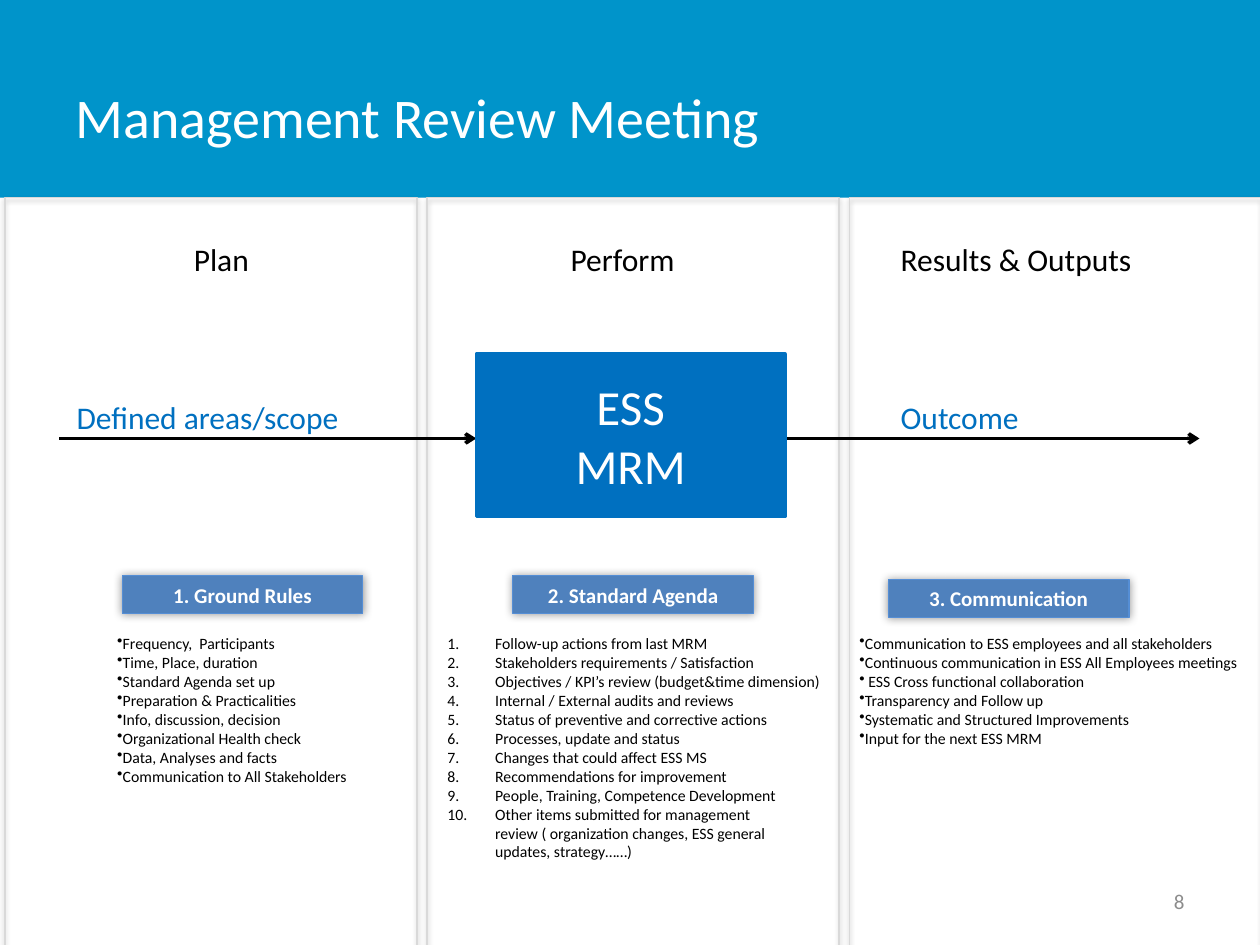
import pptx
import pptx.util
from lxml import etree
from pptx.dml.color import RGBColor
from pptx.enum.shapes import MSO_CONNECTOR, MSO_SHAPE
from pptx.enum.text import MSO_ANCHOR, MSO_AUTO_SIZE, PP_ALIGN
from pptx.oxml.ns import qn
from pptx.util import Inches, Pt

BAND_BLUE = RGBColor(0x00, 0x94, 0xCA)
PROCESS_BLUE = RGBColor(0x00, 0x70, 0xC0)
BADGE_BLUE = RGBColor(0x4F, 0x81, 0xBD)
BADGE_EDGE = RGBColor(0x55, 0x8E, 0xD5)
PANEL_EDGE = RGBColor(0xD9, 0xD9, 0xD9)
NUMBER_GREY = RGBColor(0x8C, 0x8C, 0x8C)
BLACK = RGBColor(0x00, 0x00, 0x00)
WHITE = RGBColor(0xFF, 0xFF, 0xFF)

TITLE = "Management Review Meeting"
PAGE_NUMBER = "8"
PROCESS = ["ESS", "MRM"]
HEADINGS = [  # text, left, width
    ("Plan", 1.44, 0.64),
    ("Perform", 4.43, 1.05),
    ("Results & Outputs", 7.05, 2.06),
]
FLOW_LABELS = [("Defined areas/scope", 0.51, 3.46), ("Outcome", 7.05, 1.53)]
ARROW_STARTS = [0.47, 6.21]
BADGES = [  # text, left, top
    ("1. Ground Rules", 0.97, 4.57),
    ("2. Standard Agenda", 4.07, 4.57),
    ("3. Communication", 7.05, 4.6),
]
GROUND_RULES = [
    "Frequency,  Participants",
    "Time, Place, duration",
    "Standard Agenda set up",
    "Preparation & Practicalities",
    "Info, discussion, decision",
    "Organizational Health check",
    "Data, Analyses and facts",
    "Communication to All Stakeholders",
]
AGENDA = [
    "Follow-up actions from last MRM",
    "Stakeholders requirements / Satisfaction",
    "Objectives / KPI’s review (budget&time dimension)",
    "Internal / External audits and reviews",
    "Status of preventive and corrective actions",
    "Processes, update and status",
    "Changes that could affect ESS MS",
    "Recommendations for improvement",
    "People, Training, Competence Development",
    "Other items submitted for management",
]
AGENDA_CONTINUED = [
    "review ( organization changes, ESS general",
    "updates, strategy……)",
]
COMMUNICATION = [
    "Communication to ESS employees and all stakeholders",
    "Continuous communication in ESS All Employees meetings",
    " ESS Cross functional collaboration",
    "Transparency and Follow up",
    "Systematic and Structured Improvements",
    "Input for the next ESS MRM",
]
BULLET = ("a:buChar", {"char": "•"})
NUMBER = ("a:buAutoNum", {"type": "arabicPeriod"})
NO_MARKER = ("a:buNone", {})
LISTS = [  # left, width, height, hanging indent, [(marker, items)]
    (0.83, 2.44, 1.31, 0, [(BULLET, GROUND_RULES)]),
    (3.45, 3.21, 1.92, 0.38, [(NUMBER, AGENDA), (NO_MARKER, AGENDA_CONTINUED)]),
    (6.72, 3.56, 1.16, 0, [(BULLET, COMMUNICATION)]),
]
LIST_TOP = 4.98
PANEL_LEFT, PANEL_PITCH, PANEL_WIDTH = 0.04, 3.35, 3.27
BAND_HEIGHT = 1.57
ARROW_Y, ARROW_LENGTH = 3.48, 3.31


def write(frame, lines, size, color, align=PP_ALIGN.LEFT, bold=False):
    frame.text = "\n".join(lines)
    font_format = {"name": "Calibri", "size": Pt(size), "bold": bold}
    for paragraph in frame.paragraphs:
        paragraph.alignment = align
        paragraph.space_before = Pt(0)
        for run in paragraph.runs:
            for key, value in font_format.items():
                setattr(run.font, key, value)
            run.font.color.rgb = color


def place(shape, left, top, width, height):
    box = {"left": left, "top": top, "width": width, "height": height}
    for key, value in box.items():
        setattr(shape, key, Inches(value))


def add_label(slide, text, box, size, color, wrap=True, align=PP_ALIGN.LEFT):
    frame = slide.shapes.add_textbox(*map(Inches, box)).text_frame
    frame.word_wrap = wrap
    write(frame, [text], size, color, align)
    return frame


def add_rect(slide, box, fill=None, edge=None, edge_width=0.75):
    rect = slide.shapes.add_shape(MSO_SHAPE.RECTANGLE, *map(Inches, box))
    rect.shadow.inherit = False
    if fill is None:
        rect.fill.background()
    else:
        rect.fill.solid()
        rect.fill.fore_color.rgb = fill
    if edge is None:
        rect.line.fill.background()
    else:
        rect.line.color.rgb = edge
        rect.line.width = Pt(edge_width)
    return rect


def add_shadow(shape, opacity, blur, distance, angle):
    """Opacity in percent, blur and distance in points, angle in degrees."""
    effects = shape.element.spPr.find(qn("a:effectLst"))
    shadow = etree.SubElement(
        effects, qn("a:outerShdw"), blurRad=str(Pt(blur)), dist=str(Pt(distance)),
        dir=str(angle * 60000), algn="ctr", rotWithShape="0")
    color = etree.SubElement(shadow, qn("a:srgbClr"), val=str(BLACK))
    etree.SubElement(color, qn("a:alpha"), val=str(opacity * 1000))


def add_arrow(slide, start):
    ends = (start, ARROW_Y, start + ARROW_LENGTH, ARROW_Y)
    arrow = slide.shapes.add_connector(MSO_CONNECTOR.STRAIGHT, *map(Inches, ends))
    arrow.line.color.rgb = BLACK
    arrow.line.width = Pt(2)
    etree.SubElement(arrow.line._get_or_add_ln(), qn("a:tailEnd"), type="arrow")
    etree.SubElement(arrow.element.spPr, qn("a:effectLst"))


def fill_list(body, left, width, height, hanging, groups):
    place(body, left, LIST_TOP, width, height)
    entries = [(marker, item) for marker, items in groups for item in items]
    frame = body.text_frame
    frame.word_wrap = True
    frame.auto_size = MSO_AUTO_SIZE.NONE
    frame.vertical_anchor = MSO_ANCHOR.TOP
    write(frame, [item for _, item in entries], 9, BLACK)
    for paragraph, (marker, _) in zip(frame.paragraphs, entries):
        tag, attributes = marker
        first_line = 0 if marker is NO_MARKER else -hanging
        properties = paragraph._p.get_or_add_pPr()
        properties.set("marL", str(Inches(hanging)))
        properties.set("indent", str(Inches(first_line)))
        etree.SubElement(properties, qn("a:buFontTx"))
        etree.SubElement(properties, qn(tag), attributes)


def main():
    deck = pptx.Presentation()
    deck.slide_width, deck.slide_height = Inches(10), Inches(7.5)
    slide = deck.slides.add_slide(deck.slide_layouts.get_by_name("Comparison"))
    title, *bodies = slide.placeholders

    backdrop = [add_rect(slide, (0, 0, 10, BAND_HEIGHT), BAND_BLUE)]
    for column in range(3):
        left = PANEL_LEFT + column * PANEL_PITCH
        panel = add_rect(slide, (left, BAND_HEIGHT, PANEL_WIDTH, 5.95), edge=PANEL_EDGE)
        add_shadow(panel, 35, 3.1, 1.8, 90)
        backdrop.append(panel)
    for depth, shape in enumerate(backdrop, start=2):
        slide.shapes.element.insert(depth, shape.element)

    place(title, 0.5, 0.3, 7.81, 1.25)
    title.text_frame.vertical_anchor = MSO_ANCHOR.MIDDLE
    write(title.text_frame, [TITLE], 32, WHITE)

    for body, content in zip(bodies, LISTS):
        fill_list(body, *content)
    for unused in bodies[len(LISTS):]:
        unused.element.getparent().remove(unused.element)

    number = add_label(slide, PAGE_NUMBER, (7.17, 6.95, 2.33, 0.4), 12,
                       NUMBER_GREY, align=PP_ALIGN.RIGHT)
    number.vertical_anchor = MSO_ANCHOR.MIDDLE
    for text, left, width in HEADINGS:
        add_label(slide, text, (left, 1.86, width, 0.4), 18, BLACK, wrap=False)
    for start in ARROW_STARTS:
        add_arrow(slide, start)
    process = add_rect(slide, (3.78, 2.81, 2.45, 1.29), PROCESS_BLUE, PROCESS_BLUE, 2)
    write(process.text_frame, PROCESS, 28, WHITE, PP_ALIGN.CENTER)
    for text, left, width in FLOW_LABELS:
        add_label(slide, text, (left, 3.11, width, 0.4), 18, PROCESS_BLUE)
    for text, left, top in BADGES:
        badge = add_rect(slide, (left, top, 1.91, 0.3), BADGE_BLUE, BADGE_EDGE)
        add_shadow(badge, 40, 5, 0, 0)
        write(badge.text_frame, [text], 12, WHITE, PP_ALIGN.CENTER, bold=True)

    deck.save("out.pptx")


if __name__ == "__main__":
    main()
